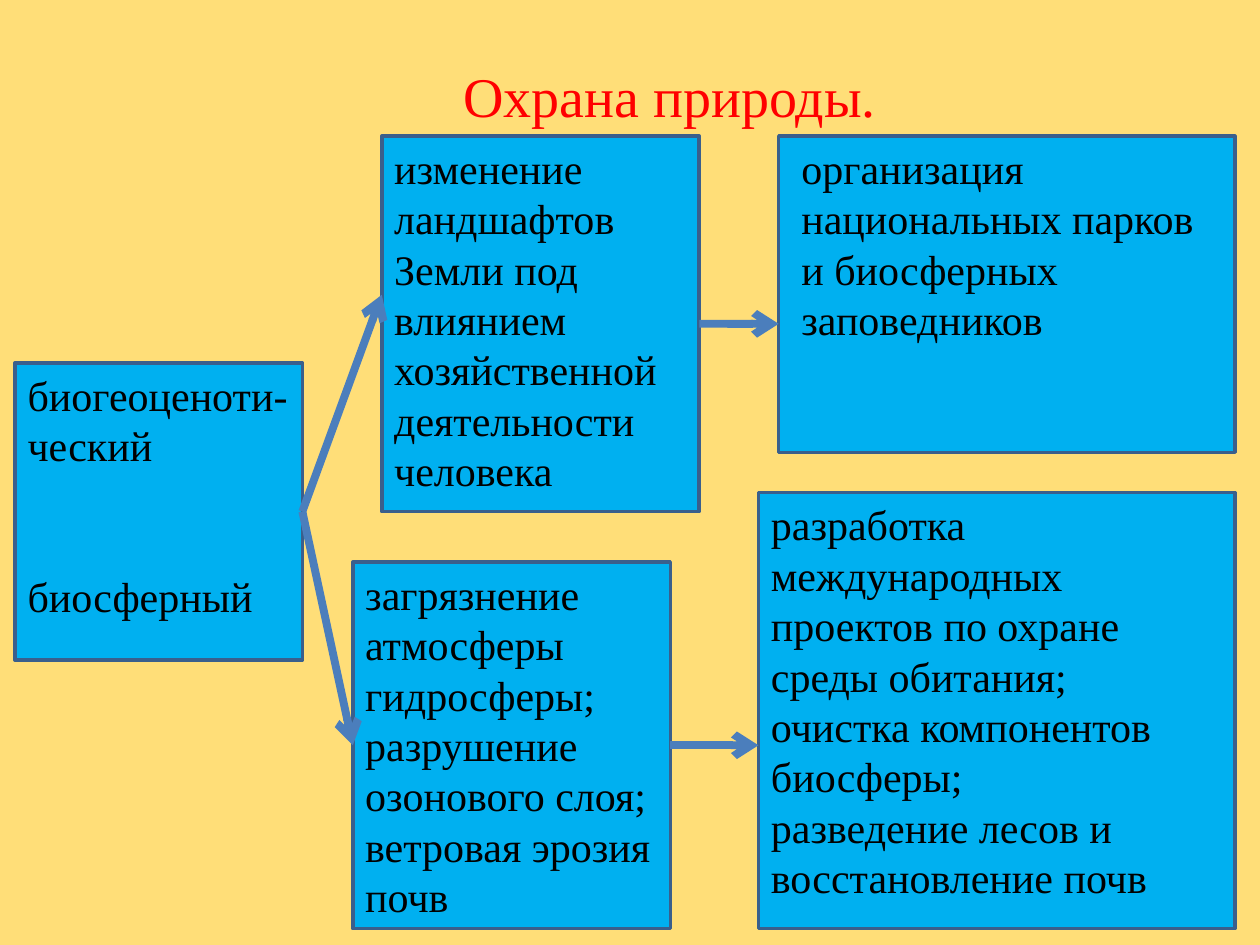
import pptx
import pptx.util
import pptx.dml.color
import pptx.enum.shapes
import pptx.enum.text
import pptx.oxml.ns
from lxml import etree
from dataclasses import dataclass


@dataclass(frozen=True)
class Theme:
    font: str = "Times New Roman"
    title_size: int = 32
    body_size: int = 24
    background: str = "FFDE78"
    title: str = "FF0000"
    text: str = "000000"
    box: str = "00B0F0"
    border: str = "3A5F8C"
    arrow: str = "4B7EBC"
    border_width: float = 2
    arrow_width: float = 4.5


THEME = Theme()
WIDTH, HEIGHT = 10, 7.5
INSET = 0.1

TOP, RIGHT, BOTTOM = 14.4, 98, 98.27
CAUSE_WIDTH = 25.2

TITLE = ("Охрана природы.", (8.3, 5.87, RIGHT, 14.4))

BOXES = {
    "levels": {
        "edges": (1.2, 38.4, 24, 69.87),
        "lines": ["биогеоценоти-ческий", "биосферный"],
        "gap": 57.6,
    },
    "landscape": {
        "edges": (30.3, TOP, 30.3 + CAUSE_WIDTH, 54.13),
        "lines": ["изменение ландшафтов Земли под влиянием хозяйственной деятельности человека"],
    },
    "pollution": {
        "edges": (28, 59.47, 28 + CAUSE_WIDTH, BOTTOM),
        "lines": [
            "загрязнение атмосферы гидросферы;",
            "разрушение озонового слоя;",
            "ветровая эрозия почв",
        ],
    },
    "reserves": {
        "edges": (61.8, TOP, RIGHT, 47.87),
        "lines": ["организация национальных парков и биосферных заповедников"],
        "indent": 0.08,
    },
    "projects": {
        "edges": (60.2, 52.13, RIGHT, BOTTOM),
        "lines": [
            "разработка международных проектов по охране среды обитания;",
            "очистка компонентов биосферы;",
            "разведение лесов и восстановление почв",
        ],
    },
}

ARROWS = [
    ("levels", "landscape", 31.2),
    ("levels", "pollution", None),
    ("landscape", "reserves", 34.27),
    ("pollution", "projects", 78.87),
]


def color(value):
    return pptx.dml.color.RGBColor.from_string(value)


def across(share):
    return pptx.util.Inches(WIDTH * share / 100)


def down(share):
    return pptx.util.Inches(HEIGHT * share / 100)


def frame(edges):
    left, top, right, bottom = edges
    return across(left), down(top), across(right - left), down(bottom - top)


def write(shape, lines, size, ink, alignment, gap=0, indent=0):
    text_frame = shape.text_frame
    text_frame.word_wrap = True
    text_frame.vertical_anchor = pptx.enum.text.MSO_ANCHOR.TOP
    text_frame.margin_left = pptx.util.Inches(INSET + indent)
    for index, line in enumerate(lines):
        paragraph = text_frame.add_paragraph() if index else text_frame.paragraphs[0]
        paragraph.alignment = alignment
        paragraph.space_before = pptx.util.Pt(gap if index else 0)
        run = paragraph.add_run()
        run.text = line
        run.font.name = THEME.font
        run.font.size = pptx.util.Pt(size)
        run.font.color.rgb = color(ink)


def add_box(slide, edges, lines, gap=0, indent=0):
    shape = slide.shapes.add_shape(pptx.enum.shapes.MSO_SHAPE.RECTANGLE, *frame(edges))
    shape.shadow.inherit = False
    shape.fill.solid()
    shape.fill.fore_color.rgb = color(THEME.box)
    shape.line.color.rgb = color(THEME.border)
    shape.line.width = pptx.util.Pt(THEME.border_width)
    write(shape, lines, THEME.body_size, THEME.text,
          pptx.enum.text.PP_ALIGN.LEFT, gap, indent)
    return shape


def add_arrow(slide, source, target, height):
    middle = target.top + target.height // 2
    connector = slide.shapes.add_connector(
        pptx.enum.shapes.MSO_CONNECTOR.STRAIGHT,
        source.left + source.width, source.top + source.height // 2,
        target.left, middle if height is None else down(height))
    connector.begin_connect(source, 3)
    if height is None:
        connector.end_connect(target, 1)
    connector.line.color.rgb = color(THEME.arrow)
    connector.line.width = pptx.util.Pt(THEME.arrow_width)
    properties = connector.element.spPr
    line = properties.find(pptx.oxml.ns.qn("a:ln"))
    etree.SubElement(line, pptx.oxml.ns.qn("a:tailEnd"), type="arrow")
    etree.SubElement(properties, pptx.oxml.ns.qn("a:effectLst"))


def main():
    presentation = pptx.Presentation()
    presentation.slide_width = pptx.util.Inches(WIDTH)
    presentation.slide_height = pptx.util.Inches(HEIGHT)
    slide = presentation.slides.add_slide(presentation.slide_layouts[6])
    slide.background.fill.solid()
    slide.background.fill.fore_color.rgb = color(THEME.background)

    heading, edges = TITLE
    title = slide.shapes.add_textbox(*frame(edges))
    write(title, [heading], THEME.title_size, THEME.title, pptx.enum.text.PP_ALIGN.CENTER)

    shapes = {name: add_box(slide, **box) for name, box in BOXES.items()}
    for source, target, height in ARROWS:
        add_arrow(slide, shapes[source], shapes[target], height)

    presentation.save("out.pptx")


if __name__ == "__main__":
    main()
